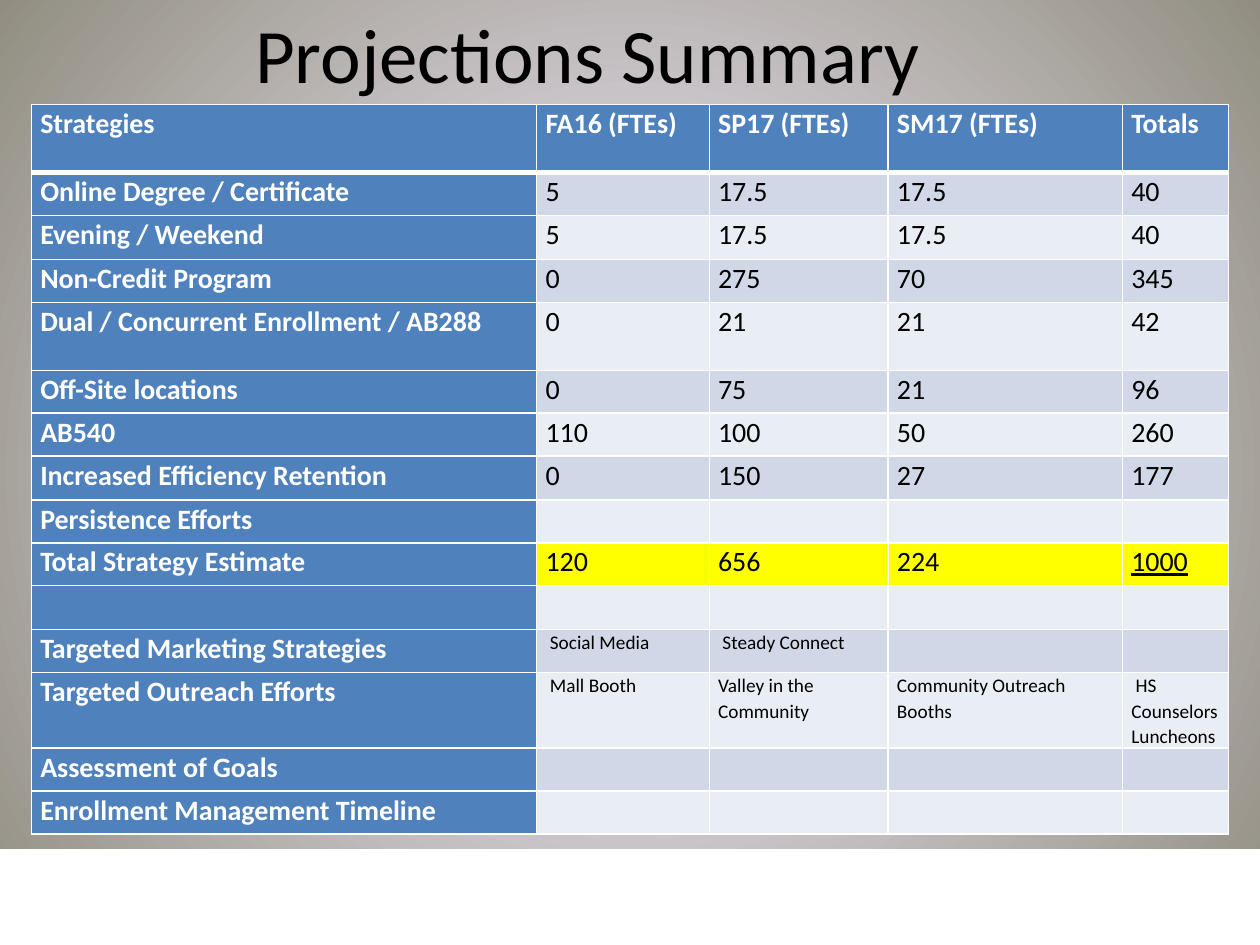
from lxml import etree
from pptx import Presentation
from pptx import util as u
from pptx.dml import color
from pptx.enum import shapes, text
from pptx.oxml import ns, parse_xml

TITLE = "Projections Summary"
HEAD = ("Strategies", "FA16 (FTEs)", "SP17 (FTEs)", "SM17 (FTEs)", "Totals")
ROWS = [
    ("Online Degree / Certificate", "5", "17.5", "17.5", "40"),
    ("Evening / Weekend", "5", "17.5", "17.5", "40"),
    ("Non-Credit Program", "0", "275", "70", "345"),
    ("Dual / Concurrent Enrollment / AB288", "0", "21", "21", "42"),
    ("Off-Site locations", "0", "75", "21", "96"),
    ("AB540", "110", "100", "50", "260"),
    ("Increased Efficiency Retention", "0", "150", "27", "177"),
    ("Persistence Efforts",),
    ("Total Strategy Estimate", "120", "656", "224", "1000"),
    (),
    ("Targeted Marketing Strategies", " Social Media", " Steady Connect"),
    ("Targeted Outreach Efforts", " Mall Booth", "Valley in the Community",
     "Community Outreach Booths", " HS Counselors Luncheons"),
    ("Assessment of Goals",),
    ("Enrollment Management Timeline",),
]
WIDTHS = (4.01, 1.37, 1.42, 1.86, 0.84)
HEIGHTS = (0.54, 0.34, 0.35, 0.34, 0.54, 0.34, 0.34, 0.35,
           0.34, 0.34, 0.35, 0.34, 0.6, 0.34, 0.34)
TOTAL, NOTES = 9, (11, 12)
BLUE, BANDS, YELLOW = "4F81BD", ("E9EDF4", "D0D8E8"), "FFFF00"
WHITE, BLACK = "FFFFFF", "000000"
GLOW = ((0, "E6E0EC"), (20, "E6E0EC"), (100, "918E81"))


def rgb(code):
    """Turn a hex string into a colour."""
    return color.RGBColor.from_string(code)


def style(par, size, code, bold=False, line=False):
    """Format every run of a paragraph."""
    for run in par.runs:
        font = run.font
        font.name, font.size, font.bold = "Calibri", u.Pt(size), bold
        font.underline = line
        font.color.rgb = rgb(code)


def backdrop(slide):
    """Fill the background with a round gradient."""
    slide.background.fill.gradient()
    stops = "".join(f'<a:gs pos="{pos * 1000}"><a:srgbClr val="{code}"/></a:gs>'
                    for pos, code in GLOW)
    grad = parse_xml(
        f'<a:gradFill {ns.nsdecls("a")} rotWithShape="1"><a:gsLst>{stops}</a:gsLst>'
        '<a:path path="circle"><a:fillToRect l="50000" t="50000" r="50000" '
        'b="50000"/></a:path></a:gradFill>')
    old = slide.element.find(".//" + ns.qn("a:gradFill"))
    old.getparent().replace(old, grad)


def border(cell, row):
    """Draw white cell edges, thicker under the header."""
    props = cell._tc.get_or_add_tcPr()
    for side in "LRTB":
        thick = (side, row) in (("B", 0), ("T", 1))
        edge = etree.SubElement(props, ns.qn(f"a:ln{side}"),
                                w=str(u.Pt(3 if thick else 1)))
        fill = etree.SubElement(edge, ns.qn("a:solidFill"))
        etree.SubElement(fill, ns.qn("a:srgbClr"), val=WHITE)


def paint(cell, row, col, words):
    """Fill one cell and set its text."""
    label = row == 0 or col == 0
    cell.margin_left = cell.margin_right = u.Inches(0.07)
    cell.margin_top = cell.margin_bottom = 0
    border(cell, row)
    cell.fill.solid()
    band = YELLOW if row == TOTAL else BANDS[row % 2]
    cell.fill.fore_color.rgb = rgb(BLUE if label else band)
    if words:
        par = cell.text_frame.paragraphs[0]
        par.text, par.line_spacing = words, 1.07
        size = 11 if row in NOTES and not label else 16
        style(par, size, WHITE if label else BLACK, label,
              row == TOTAL and col == len(HEAD) - 1)


def main():
    """Build the slide and save it."""
    deck = Presentation()
    deck.slide_width, deck.slide_height = u.Inches(10), u.Inches(7.5)
    slide = deck.slides.add_slide(deck.slide_layouts[6])
    backdrop(slide)

    strip = slide.shapes.add_shape(shapes.MSO_SHAPE.RECTANGLE, 0, u.Inches(6.75),
                                   u.Inches(10), u.Inches(0.75))
    strip.shadow.inherit = False
    strip.fill.solid()
    strip.fill.fore_color.rgb = strip.line.color.rgb = rgb(WHITE)
    strip.line.width = u.Pt(2)

    frame = slide.shapes.add_textbox(u.Inches(0.5), 0, u.Inches(8.33),
                                     u.Inches(0.83)).text_frame
    frame.word_wrap = True
    frame.vertical_anchor = text.MSO_ANCHOR.MIDDLE
    frame.text = TITLE
    frame.paragraphs[0].alignment = text.PP_ALIGN.CENTER
    style(frame.paragraphs[0], 44, BLACK)

    data = [HEAD] + ROWS
    grid = slide.shapes.add_table(len(data), len(HEAD), u.Inches(0.25), u.Inches(0.83),
                                  u.Inches(sum(WIDTHS)), u.Inches(sum(HEIGHTS))).table
    for col, wide in zip(grid.columns, WIDTHS):
        col.width = u.Inches(wide)
    for row, (high, words) in enumerate(zip(HEIGHTS, data)):
        grid.rows[row].height = u.Inches(high)
        for col in range(len(HEAD)):
            paint(grid.cell(row, col), row, col, words[col] if col < len(words) else "")

    deck.save("out.pptx")


if __name__ == "__main__":
    main()
